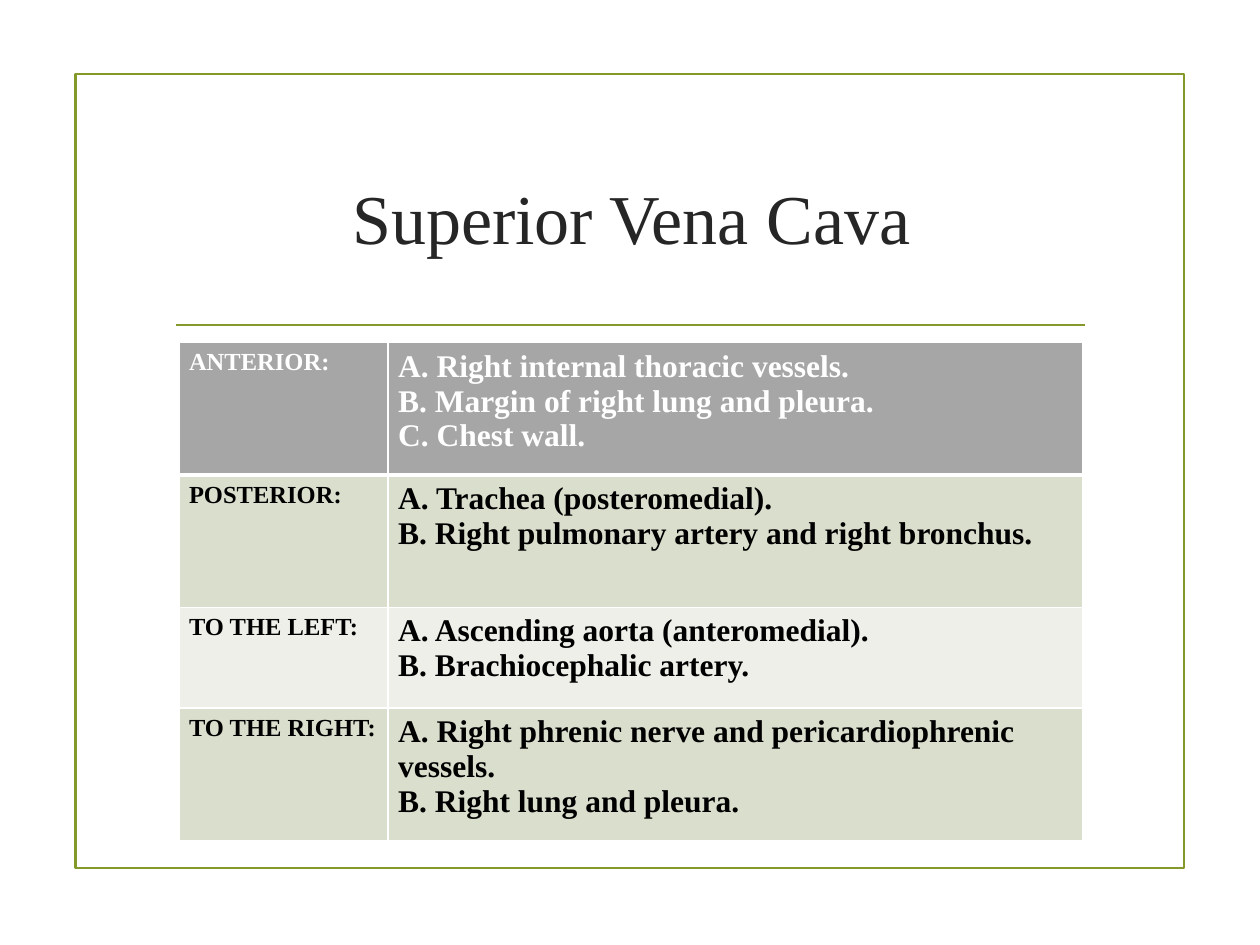
from lxml.etree import SubElement
from pptx import Presentation
from pptx.dml.color import RGBColor
from pptx.enum.shapes import MSO_CONNECTOR as Connector, MSO_SHAPE as Shape
from pptx.enum.text import MSO_ANCHOR as Anchor, MSO_AUTO_SIZE as AutoSize, PP_ALIGN as Align
from pptx.oxml.ns import qn
from pptx.util import Inches, Pt

COLORS = {
    "accent": "83992A", "title": "262626", "header": "A6A6A6",
    "band_dark": "D9DECD", "band_light": "EDEFE8",
    "white": "FFFFFF", "black": "000000",
}

RELATIONS = [
    ("ANTERIOR:", ["A. Right internal thoracic vessels.",
                   "B. Margin of right lung and pleura.",
                   "C. Chest wall."]),
    ("POSTERIOR:", ["A. Trachea (posteromedial).",
                    "B. Right pulmonary artery and right bronchus."]),
    ("TO THE LEFT:", ["A. Ascending aorta (anteromedial).",
                      "B. Brachiocephalic artery."]),
    ("TO THE RIGHT:", ["A. Right phrenic nerve and pericardiophrenic vessels.",
                       "B. Right lung and pleura."]),
]


def set_attributes(target, values):
    for name, value in values.items():
        setattr(target, name, value)


class SlideBuilder:
    font = "Times New Roman"
    rule_width = Pt(1.25)
    margins = {"margin_left": Inches(0.08), "margin_right": Inches(0.08),
               "margin_top": Inches(0.05), "margin_bottom": Inches(0.05)}

    def __init__(self, slide):
        self.slide = slide

    def color(self, name):
        return RGBColor.from_string(COLORS[name])

    def style_font(self, font, size, color, bold=False):
        set_attributes(font, {"name": self.font, "size": Pt(size), "bold": bold})
        font.color.rgb = self.color(color)

    def outline(self, line):
        line.color.rgb = self.color("accent")
        line.width = self.rule_width

    def frame(self, left, top, width, height):
        border = self.slide.shapes.add_shape(
            Shape.RECTANGLE, *map(Inches, (left, top, width, height)))
        border.shadow.inherit = False
        border.fill.background()
        self.outline(border.line)

    def rule(self, left, right, y):
        divider = self.slide.shapes.add_connector(
            Connector.STRAIGHT, *map(Inches, (left, y, right, y)))
        self.outline(divider.line)
        SubElement(divider._element.spPr, qn("a:effectLst"))

    def title(self, text, left, top, width, height):
        heading = self.slide.shapes.title
        set_attributes(heading, {"left": Inches(left), "top": Inches(top),
                                 "width": Inches(width), "height": Inches(height)})
        frame = heading.text_frame
        set_attributes(frame, {"text": text, "word_wrap": True,
                               "auto_size": AutoSize.NONE,
                               "vertical_anchor": Anchor.MIDDLE})
        paragraph = frame.paragraphs[0]
        paragraph.alignment = Align.CENTER
        self.style_font(paragraph.font, 40, "title")

    def borders(self, cell, widths):
        """Draw white cell borders; widths maps a side (L, R, T, B) to points."""
        properties = cell._tc.get_or_add_tcPr()
        for position, (side, width) in enumerate(widths.items()):
            edge = properties.makeelement(qn(f"a:ln{side}"), {"w": str(Pt(width))})
            fill = SubElement(edge, qn("a:solidFill"))
            SubElement(fill, qn("a:srgbClr"), val=COLORS["white"])
            properties.insert(position, edge)

    def cell(self, cell, lines, size, color, fill, widths):
        set_attributes(cell, self.margins)
        cell.vertical_anchor = Anchor.TOP
        cell.fill.solid()
        cell.fill.fore_color.rgb = self.color(fill)
        cell.text = "\n".join(lines)
        for paragraph in cell.text_frame.paragraphs:
            paragraph.alignment = Align.LEFT
            for run in paragraph.runs:
                self.style_font(run.font, size, color, bold=True)
        self.borders(cell, widths)

    def table(self, rows, left, top, column_widths, row_heights):
        table = self.slide.shapes.add_table(
            len(rows), len(column_widths), Inches(left), Inches(top),
            Inches(sum(column_widths)), Inches(sum(row_heights))).table
        for column, width in zip(table.columns, column_widths):
            column.width = Inches(width)
        for index, (side, structures) in enumerate(rows):
            table.rows[index].height = Inches(row_heights[index])
            is_header = index == 0
            band = "band_dark" if index % 2 else "band_light"
            fill = "header" if is_header else band
            color = "white" if is_header else "black"
            widths = {"L": 1, "R": 1, "T": 3 if index == 1 else 1,
                      "B": 3 if is_header else 1}
            for column, (lines, size) in enumerate((([side], 14), (structures, 18))):
                self.cell(table.cell(index, column), lines, size, color, fill, widths)


def main():
    presentation = Presentation()
    presentation.slide_width = Inches(10)
    presentation.slide_height = Inches(7.5)
    title_only = presentation.slide_layouts[5]
    builder = SlideBuilder(presentation.slides.add_slide(title_only))

    builder.frame(0.6, 0.59, 8.8, 6.3)
    builder.rule(1.4, 8.61, 2.58)
    builder.title("Superior Vena Cava", 1.29, 1, 7.44, 1.43)
    builder.table(RELATIONS, 1.42, 2.72, (1.66, 5.51), (1.05, 1.05, 0.8, 1.05))
    presentation.save("out.pptx")


if __name__ == "__main__":
    main()
